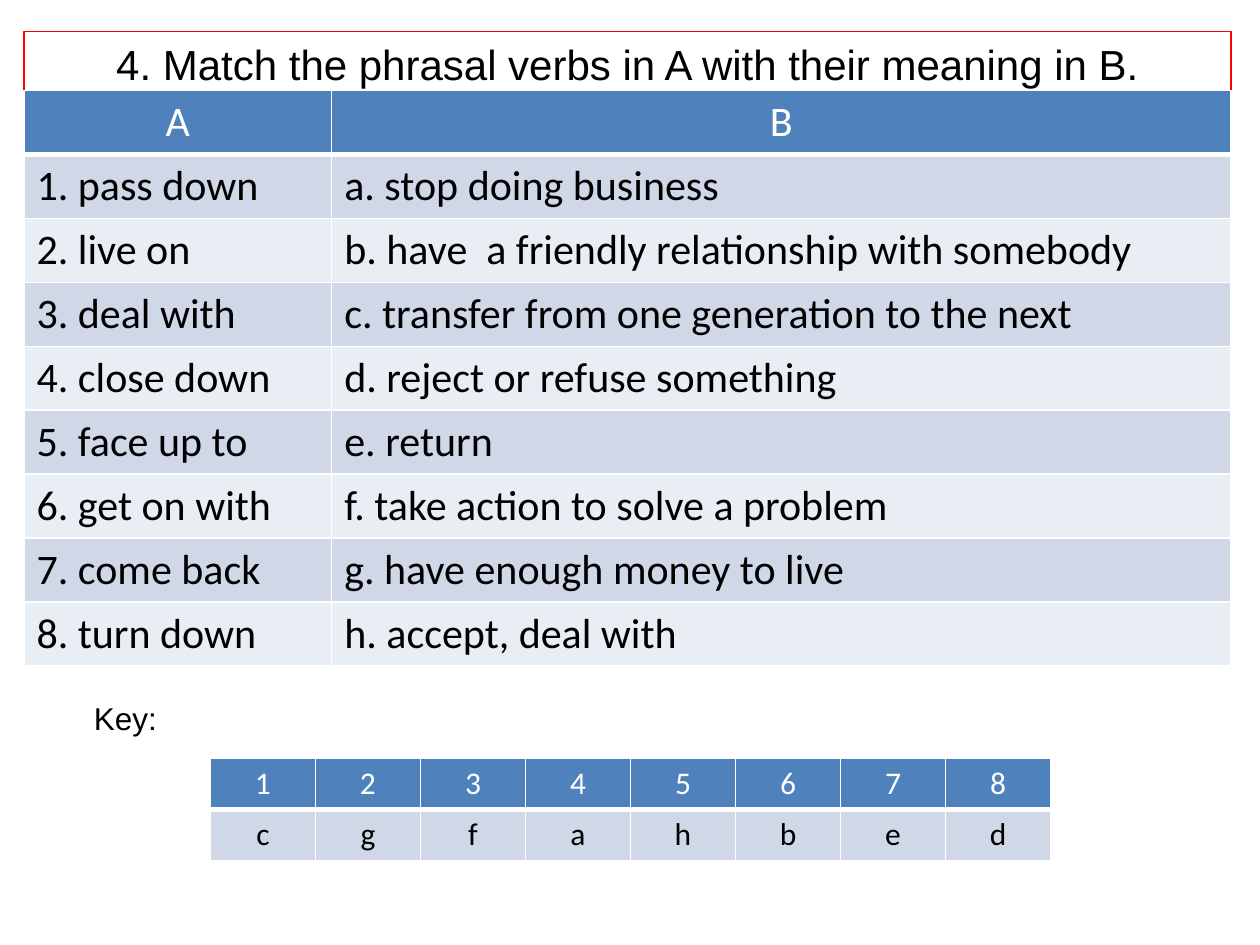
from lxml.etree import SubElement
from pptx import Presentation
from pptx.dml.color import RGBColor
from pptx.enum.shapes import MSO_SHAPE as Shape
from pptx.enum.text import PP_ALIGN as Align
from pptx.oxml.ns import qn
from pptx.util import Inches, Pt

WHITE, BLACK, RED = "FFFFFF", "000000", "FF0000"
HEADER, BANDS = "4F81BD", ("D0D8E8", "E9EDF4")

LEFT, WIDTH = 0.19, 9.58
VERB_SHARE = 0.255
MATCH_ROW, KEY_ROW = 0.5, 0.405

PAIRS = [
    ("1. pass down", "a. stop doing business"),
    ("2. live on", "b. have  a friendly relationship with somebody"),
    ("3. deal with", "c. transfer from one generation to the next"),
    ("4. close down", "d. reject or refuse something"),
    ("5. face up to", "e. return"),
    ("6. get on with", "f. take action to solve a problem"),
    ("7. come back", "g. have enough money to live"),
    ("8. turn down", "h. accept, deal with"),
]
ANSWERS = "cgfahbed"


def rgb(value):
    return RGBColor.from_string(value)


def write(frame, text, size, font, color=BLACK, align=Align.CENTER):
    paragraph = frame.paragraphs[0]
    paragraph.alignment = align
    run = paragraph.add_run()
    run.text = text
    run.font.size = Pt(size)
    run.font.name = font
    run.font.color.rgb = rgb(color)


def set_borders(cell, bottom):
    """Draw white cell edges, 1 pt except for the given bottom width."""
    properties = cell._tc.get_or_add_tcPr()
    edges = {"lnL": 1, "lnR": 1, "lnT": 1, "lnB": bottom}
    for position, (edge, width) in enumerate(edges.items()):
        line = SubElement(properties, qn(f"a:{edge}"), w=str(Pt(width)))
        properties.insert(position, line)
        fill = SubElement(line, qn("a:solidFill"))
        SubElement(fill, qn("a:srgbClr"), val=WHITE)


def add_grid(slide, box, rows, shares, size, body_align):
    """Place a banded table whose first row is the header."""
    left, top, width, height = map(Inches, box)
    table = slide.shapes.add_table(
        len(rows), len(shares), left, top, width, height).table
    for column, share in zip(table.columns, shares):
        column.width = int(width * share)
    for number, texts in enumerate(rows):
        is_header = number == 0
        for column, text in enumerate(texts):
            cell = table.cell(number, column)
            cell.fill.solid()
            cell.fill.fore_color.rgb = rgb(
                HEADER if is_header else BANDS[(number - 1) % 2])
            set_borders(cell, 3 if is_header else 1)
            write(cell.text_frame, text, size, "Calibri",
                  WHITE if is_header else BLACK,
                  Align.CENTER if is_header else body_align)


def add_title(slide, box):
    title = slide.shapes.add_shape(Shape.RECTANGLE, *map(Inches, box))
    title.shadow.inherit = False
    title.fill.background()
    title.line.color.rgb = rgb(RED)
    title.line.width = Pt(0.75)
    title.text_frame.word_wrap = True
    write(title.text_frame,
          "4. Match the phrasal verbs in A with their meaning in B.", 24, "Arial")


def add_matching(slide, box):
    add_grid(slide, box, [("A", "B")] + PAIRS,
             (VERB_SHARE, 1 - VERB_SHARE), 24, Align.LEFT)


def add_key_label(slide, box):
    label = slide.shapes.add_textbox(*map(Inches, box))
    label.text_frame.word_wrap = True
    write(label.text_frame, "Key:", 18, "Arial")


def add_key(slide, box):
    count = len(ANSWERS)
    numbers = [str(number) for number in range(1, count + 1)]
    add_grid(slide, box, [numbers, ANSWERS], [1 / count] * count, 18, Align.CENTER)


def main():
    deck = Presentation()
    deck.slide_width, deck.slide_height = Inches(10), Inches(7.5)
    slide = deck.slides.add_slide(deck.slide_layouts[6])
    add_title(slide, (LEFT, 0.25, WIDTH, 0.51))
    add_matching(slide, (LEFT, 0.72, WIDTH, MATCH_ROW * (len(PAIRS) + 1)))
    add_key(slide, (1.67, 6.02, 6.67, KEY_ROW * 2))
    add_key_label(slide, (0.58, 5.5, 0.83, 0.4))
    deck.save("out.pptx")


if __name__ == "__main__":
    main()
